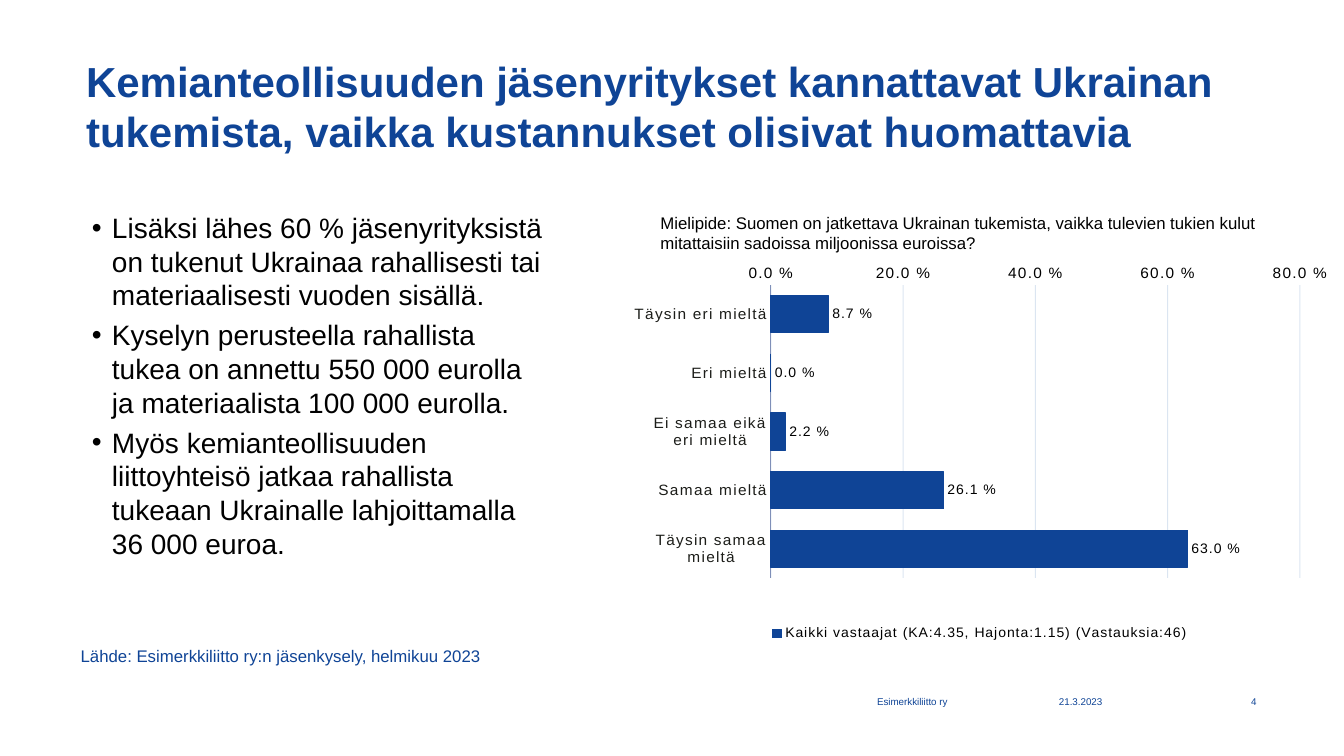
from lxml import etree
from pptx import Presentation
from pptx.chart.data import CategoryChartData
from pptx.dml.color import RGBColor
from pptx.enum.chart import (XL_AXIS_CROSSES, XL_CHART_TYPE, XL_LABEL_POSITION,
                             XL_LEGEND_POSITION, XL_TICK_MARK)
from pptx.enum.text import MSO_ANCHOR, MSO_AUTO_SIZE, PP_ALIGN
from pptx.oxml.ns import qn
from pptx.util import Inches, Pt

LEFT, CENTER, RIGHT = PP_ALIGN.LEFT, PP_ALIGN.CENTER, PP_ALIGN.RIGHT
TOP, MIDDLE = MSO_ANCHOR.TOP, MSO_ANCHOR.MIDDLE
NO_TICK = XL_TICK_MARK.NONE
FONT = "Arial"
COLORS = {"blue": "0F4496", "black": "000000", "label": "1C1D19",
          "grid": "4F81BD", "axis": "7F8FB8"}
COLORS = {name: RGBColor.from_string(value) for name, value in COLORS.items()}

presentation = Presentation()
presentation.slide_width, presentation.slide_height = Inches(13.33), Inches(7.5)
COLUMN = presentation.slide_width / 100
ROW = presentation.slide_height / 100
slide = presentation.slides.add_slide(presentation.slide_layouts[3])


def area(left, top, width, height):
    """Turn hundredths of the slide into left, top, width and height."""
    return [round(share * unit) for share, unit in
            zip((left, top, width, height), (COLUMN, ROW, COLUMN, ROW))]


def write_text(shape, texts, place, size, color="blue", bold=False, align=LEFT,
               anchor=TOP, margins=(0, 0, 0, 0), bullet=None):
    shape.left, shape.top, shape.width, shape.height = area(*place)
    frame = shape.text_frame
    frame.word_wrap, frame.auto_size = True, MSO_AUTO_SIZE.NONE
    frame.vertical_anchor = anchor
    (frame.margin_left, frame.margin_top,
     frame.margin_right, frame.margin_bottom) = [Inches(margin) for margin in margins]
    for index, text in enumerate(texts):
        paragraph = frame.paragraphs[0] if index == 0 else frame.add_paragraph()
        paragraph.text = text
        paragraph.alignment = align
        paragraph.space_before = Pt(4.6) if index else Pt(0)
        properties = paragraph._p.get_or_add_pPr()
        indent = Inches(0.2) if bullet else 0
        properties.set("marL", str(indent))
        properties.set("indent", str(-indent))
        if bullet:
            etree.SubElement(properties, qn("a:buChar")).set("char", bullet)
        else:
            etree.SubElement(properties, qn("a:buNone"))
        font = paragraph.runs[0].font
        font.name, font.size, font.bold = FONT, Pt(size), bold
        font.color.rgb = COLORS[color]


# Title, bullet list and source line
title, bullets, source = slide.placeholders
body_margins = (0, 0.02, 0.04, 0.02)
write_text(title, ["Kemianteollisuuden jäsenyritykset kannattavat Ukrainan tukemista, "
                   "vaikka kustannukset olisivat huomattavia"],
           (6.4, 7.3, 87, 13.1), 30, bold=True, margins=(0, 0, 0.04, 0))
write_text(bullets, [
    "Lisäksi lähes 60 % jäsenyrityksistä on tukenut Ukrainaa rahallisesti tai "
    "materiaalisesti vuoden sisällä.",
    "Kyselyn perusteella rahallista tukea on annettu 550 000 eurolla ja "
    "materiaalista 100 000 eurolla.",
    "Myös kemianteollisuuden liittoyhteisö jatkaa rahallista tukeaan Ukrainalle "
    "lahjoittamalla 36 000 euroa.",
], (6.83, 27.6, 34.1, 57.7), 20, "black", margins=body_margins, bullet="•")
write_text(source, ["Lähde: Esimerkkiliitto ry:n jäsenkysely, helmikuu 2023"],
           (6, 84.3, 35.2, 4.9), 12, anchor=MIDDLE, margins=body_margins)

# Survey question above the chart
question = slide.shapes.add_textbox(0, 0, 0, 0)
write_text(question, ["Mielipide: Suomen on jatkettava Ukrainan tukemista, vaikka tulevien "
                      "tukien kulut mitattaisiin sadoissa miljoonissa euroissa?"],
           (48.4, 27.5, 46.7, 7.9), 12, "black", margins=(0.1, 0.05, 0.1, 0.05))

# Footer: sender, date and page number
for text, left, width, align in [("Esimerkkiliitto ry", 52.4, 18.1, RIGHT),
                                 ("21.3.2023", 77.2, 6.4, CENTER),
                                 ("4", 90.2, 3.3, RIGHT)]:
    footer = slide.shapes.add_textbox(0, 0, 0, 0)
    write_text(footer, [text], (left, 92, width, 2.7), 7, align=align)

# Bar chart of the answers
answers = {"Täysin eri mieltä": 0.087, "Eri mieltä": 0, "Ei samaa eikä eri mieltä": 0.022,
           "Samaa mieltä": 0.261, "Täysin samaa mieltä": 0.63}
percent = r"0.0\ %"
chart_data = CategoryChartData(number_format=percent)
chart_data.categories = list(answers)
chart_data.add_series("Kaikki vastaajat (KA:4.35, Hajonta:1.15) (Vastauksia:46)",
                      list(answers.values()))
chart = slide.shapes.add_chart(XL_CHART_TYPE.BAR_CLUSTERED,
                               *area(47, 34.9, 51.8, 50.4), chart_data).chart
chart.has_title = False
chart.has_legend = True
chart.legend.position = XL_LEGEND_POSITION.BOTTOM
chart.legend.include_in_layout = False

plot = chart.plots[0]
plot.gap_width = 58
plot.vary_by_categories = False
series = plot.series[0]
series.format.fill.solid()
series.format.fill.fore_color.rgb = COLORS["blue"]
series.format.line.color.rgb = COLORS["blue"]
series.format.line.width = Pt(0.75)
plot.has_data_labels = True
labels = plot.data_labels
labels.show_value = True
labels.number_format, labels.number_format_is_linked = percent, False
labels.position = XL_LABEL_POSITION.OUTSIDE_END

# Axes
category_axis, value_axis = chart.category_axis, chart.value_axis
category_axis.reverse_order = True
category_axis.crosses = XL_AXIS_CROSSES.MAXIMUM
category_axis.format.line.color.rgb = COLORS["axis"]
category_axis.format.line.width = Pt(0.75)
value_axis.minimum_scale, value_axis.maximum_scale = 0, 0.8
value_axis.major_unit = 0.2
value_axis.tick_labels.number_format = percent
value_axis.tick_labels.number_format_is_linked = False
value_axis.format.line.fill.background()
for axis in (category_axis, value_axis):
    axis.major_tick_mark = axis.minor_tick_mark = NO_TICK
grid_line = value_axis.major_gridlines.format.line
grid_line.color.rgb = COLORS["grid"]
grid_line.width = Pt(0.75)
for color in value_axis._element.iterfind(".//" + qn("c:majorGridlines") + "//" + qn("a:srgbClr")):
    etree.SubElement(color, qn("a:alpha")).set("val", "20000")

# Chart fonts, with slightly spaced letters
for font, size, color in [(chart.font, 10, "blue"), (chart.legend.font, 10, "black"),
                          (labels.font, 10, "black"),
                          (category_axis.tick_labels.font, 11, "label"),
                          (value_axis.tick_labels.font, 11, "black")]:
    font.name, font.size, font.bold = FONT, Pt(size), False
    font.color.rgb = COLORS[color]
for properties in chart._chartSpace.iter(qn("a:defRPr")):
    properties.set("spc", "80")

# Fixed place of the plot inside the chart
plot_area = chart._chartSpace.chart.plotArea
for old_layout in plot_area.findall(qn("c:layout")):
    plot_area.remove(old_layout)
layout = etree.Element(qn("c:layout"))
plot_area.insert(0, layout)
manual = etree.SubElement(layout, qn("c:manualLayout"))
for tag, value in [("layoutTarget", "inner"), ("xMode", "edge"), ("yMode", "edge"),
                   ("x", 0.2), ("y", 0.03), ("w", 0.76), ("h", 0.79)]:
    etree.SubElement(manual, qn("c:" + tag)).set("val", str(value))

presentation.save("out.pptx")
